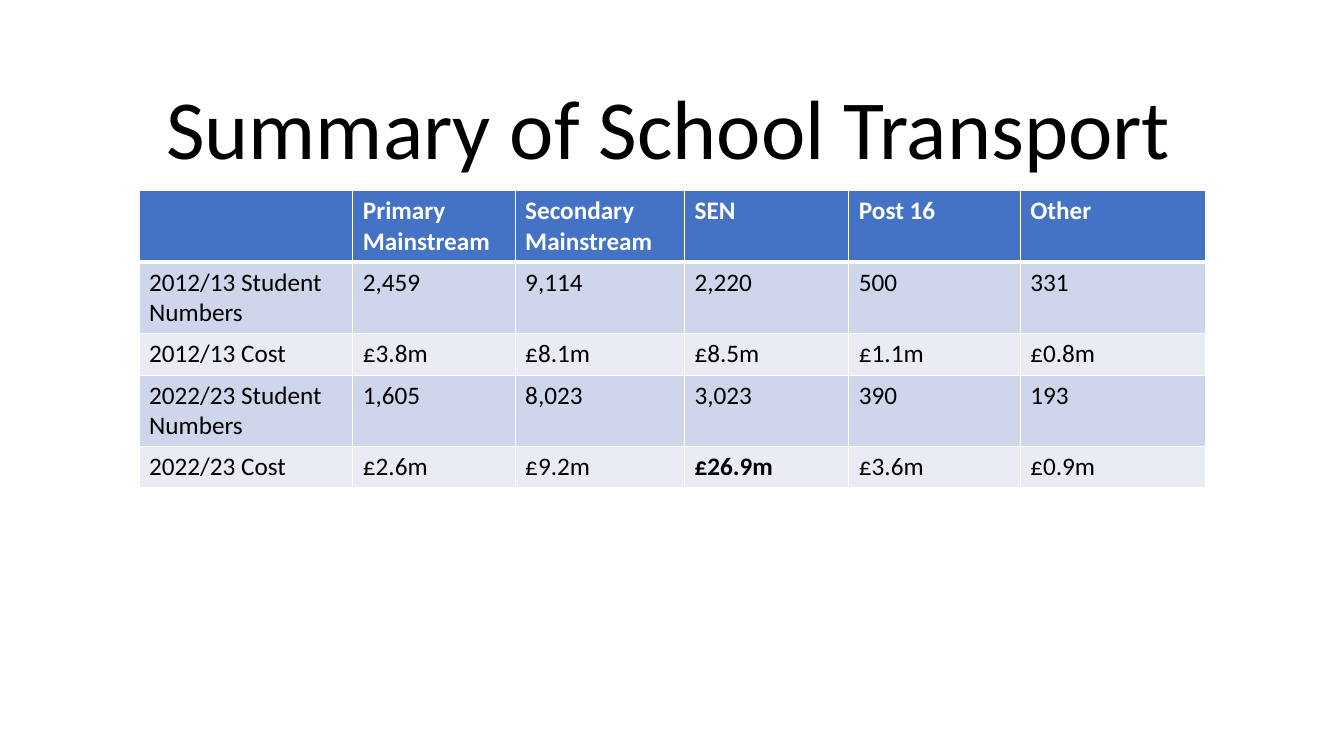
from lxml.etree import SubElement
from pptx import Presentation
from pptx.dml.color import RGBColor
from pptx.enum.text import MSO_ANCHOR, PP_ALIGN
from pptx.oxml.ns import qn
from pptx.util import Inches, Pt

COLOURS = {
    "header": "4472C4",
    "odd_row": "CFD5EA",
    "even_row": "E9EBF5",
    "white": "FFFFFF",
    "black": "000000",
}
FONT = "Calibri"
COLUMN_WIDTHS = [2.12, 1.61, 1.68, 1.63, 1.7, 1.84]
ROW_HEIGHTS = [0.7, 0.7, 0.41, 0.7, 0.41]
TRANSPORT_ROWS = [
    ["", "Primary Mainstream", "Secondary Mainstream", "SEN", "Post 16", "Other"],
    ["2012/13 Student Numbers", "2,459", "9,114", "2,220", "500", "331"],
    ["2012/13 Cost", "£3.8m", "£8.1m", "£8.5m", "£1.1m", "£0.8m"],
    ["2022/23 Student Numbers", "1,605", "8,023", "3,023", "390", "193"],
    ["2022/23 Cost", "£2.6m", "£9.2m", "£26.9m", "£3.6m", "£0.9m"],
]
HIGHLIGHT = "£26.9m"


def write_text(frame, text, size=18, colour="black", bold=False,
               align=PP_ALIGN.LEFT, line_spacing=1.0):
    """Write one formatted paragraph into a text frame."""
    para = frame.paragraphs[0]
    para.alignment = align
    para.line_spacing = line_spacing
    span = para.add_run()
    span.text = text
    span.font.name = FONT
    span.font.size = Pt(size)
    span.font.bold = bold
    span.font.color.rgb = RGBColor.from_string(COLOURS[colour])


def set_borders(cell, bottom_width):
    """Draw white lines round a cell, with the given width at the bottom."""
    properties = cell._tc.get_or_add_tcPr()
    widths = {"a:lnL": 1, "a:lnR": 1, "a:lnT": 1, "a:lnB": bottom_width}
    for tag, width in widths.items():
        line = SubElement(properties, qn(tag), w=str(Pt(width)))
        fill = SubElement(line, qn("a:solidFill"))
        SubElement(fill, qn("a:srgbClr"), val=COLOURS["white"])


def place_title(page, left, top, width, height):
    """Place the slide title in the given box."""
    title = page.shapes.title
    title.left, title.top = Inches(left), Inches(top)
    title.width, title.height = Inches(width), Inches(height)
    frame = title.text_frame
    frame.word_wrap = True
    frame.vertical_anchor = MSO_ANCHOR.BOTTOM
    frame.margin_right = Inches(0.48)
    write_text(frame, "Summary of School Transport", size=60,
               align=PP_ALIGN.CENTER, line_spacing=0.9)


def place_transport_table(page, left, top, width, height):
    """Place the table of student numbers and costs in the given box."""
    table = page.shapes.add_table(
        len(ROW_HEIGHTS), len(COLUMN_WIDTHS),
        Inches(left), Inches(top), Inches(width), Inches(height)).table
    for column, share in zip(table.columns, COLUMN_WIDTHS):
        column.width = Inches(width * share / sum(COLUMN_WIDTHS))
    for row, share in zip(table.rows, ROW_HEIGHTS):
        row.height = Inches(height * share / sum(ROW_HEIGHTS))
    for row_index, values in enumerate(TRANSPORT_ROWS):
        is_header = row_index == 0
        band = "header" if is_header else "odd_row" if row_index % 2 else "even_row"
        for column_index, value in enumerate(values):
            cell = table.cell(row_index, column_index)
            set_borders(cell, bottom_width=3 if is_header else 1)
            cell.fill.solid()
            cell.fill.fore_color.rgb = RGBColor.from_string(COLOURS[band])
            if value:
                write_text(cell.text_frame, value,
                           colour="white" if is_header else "black",
                           bold=is_header or value == HIGHLIGHT)


def main():
    """Build the school transport slide and save the deck."""
    deck = Presentation()
    deck.slide_width, deck.slide_height = Inches(13.33), Inches(7.5)
    page = deck.slides.add_slide(deck.slide_layouts[5])
    place_title(page, 0.99, 0.61, 11.66, 1.2)
    place_transport_table(page, 1.38, 1.89, 10.58, 2.92)
    deck.save("out.pptx")


if __name__ == "__main__":
    main()
